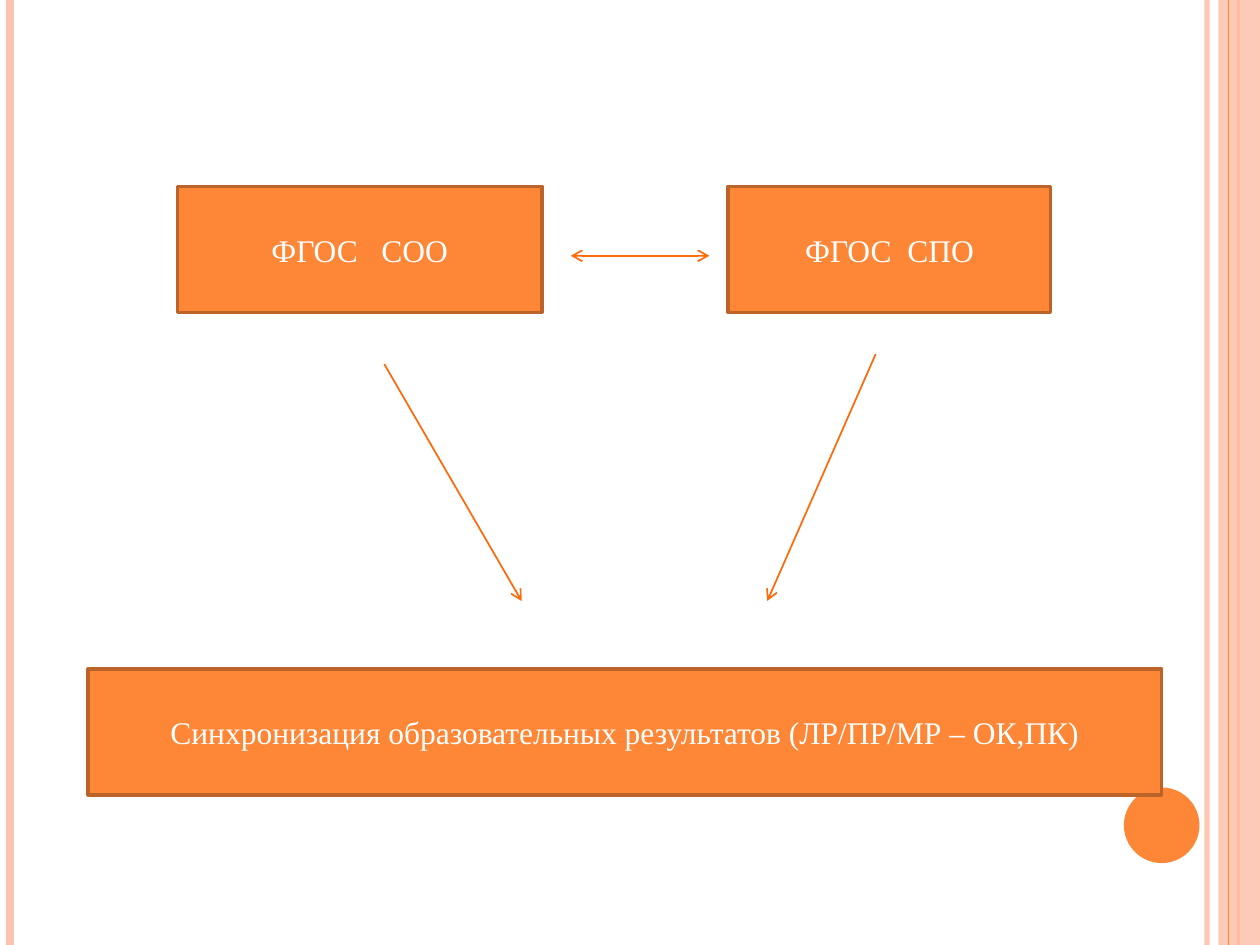
from pptx import Presentation
from pptx.dml.color import RGBColor
from pptx.enum.shapes import MSO_CONNECTOR, MSO_SHAPE
from pptx.enum.text import MSO_ANCHOR, PP_ALIGN
from pptx.oxml.ns import qn
from pptx.util import Inches, Pt
from lxml.etree import SubElement

HUES = {"fill": "FE8637", "edge": "BC6329", "pale": "FEC3AE",
        "arrow": "FF6B0A", "text": "FFFFFF"}
FONT = {"name": "Times New Roman", "size": Pt(18)}
FRAME = {"word_wrap": True, "vertical_anchor": MSO_ANCHOR.MIDDLE}


def hue(name):
    return RGBColor.from_string(HUES[name])


def apply(item, form):
    for key, value in form.items():
        setattr(item, key, value)


def fade(shape, part):
    color = next(shape._element.spPr.iter(qn("a:srgbClr")))
    SubElement(color, qn("a:alpha"), val=str(part * 1000))


def add_line(slide, start, end, name, width, tips=()):
    ends = [Inches(n) for n in (*start, *end)]
    line = slide.shapes.add_connector(MSO_CONNECTOR.STRAIGHT, *ends)
    line.line.color.rgb = hue(name)
    line.line.width = Pt(width)
    for tip in tips:
        SubElement(line.line._get_or_add_ln(), qn(f"a:{tip}"), type="arrow")
    SubElement(line._element.spPr, qn("a:effectLst"))
    return line


def add_shape(slide, kind, area, name):
    shape = slide.shapes.add_shape(kind, *[Inches(n) for n in area])
    shape.shadow.inherit = False
    shape.fill.solid()
    shape.fill.fore_color.rgb = hue(name)
    shape.line.fill.background()
    return shape


def add_box(slide, area, text):
    box = add_shape(slide, MSO_SHAPE.RECTANGLE, area, "fill")
    box.line.color.rgb = hue("edge")
    box.line.width = Pt(2)
    apply(box.text_frame, FRAME)
    para = box.text_frame.paragraphs[0]
    para.alignment = PP_ALIGN.CENTER
    run = para.add_run()
    run.text = text
    apply(run.font, FONT)
    run.font.color.rgb = hue("text")


def add_stripe(slide, left, name, width):
    return add_line(slide, (left, 0), (left, 7.5), name, width)


def add_decor(slide):
    fade(add_stripe(slide, 9.58, "pale", 3), 93)
    add_stripe(slide, 0.08, "pale", 4.5)
    add_stripe(slide, 9.83, "fill", 1.5)
    fade(add_shape(slide, MSO_SHAPE.RECTANGLE, (9.67, 0, 0.33, 7.5), "pale"), 87)
    add_stripe(slide, 9.75, "fill", 0.75)
    add_shape(slide, MSO_SHAPE.OVAL, (8.92, 6.25, 0.6, 0.6), "fill")


def main():
    """Build the slide on aligning the two education standards."""
    deck = Presentation()
    apply(deck, {"slide_width": Inches(10), "slide_height": Inches(7.5)})
    slide = deck.slides.add_slide(deck.slide_layouts[6])
    add_decor(slide)
    for left, top, width, text in (
        (1.41, 1.48, 2.89, "ФГОС   СОО"),
        (5.78, 1.48, 2.56, "ФГОС  СПО"),
        (0.7, 5.31, 8.52,
         "Синхронизация образовательных результатов (ЛР/ПР/МР – ОК,ПК)"),
    ):
        add_box(slide, (left, top, width, 1), text)
    for start, end, tips in (
        ((3.05, 2.89), (4.14, 4.77), ["tailEnd"]),
        ((6.95, 2.81), (6.09, 4.77), ["tailEnd"]),
        ((4.53, 2.03), (5.63, 2.03), ["headEnd", "tailEnd"]),
    ):
        add_line(slide, start, end, "arrow", 1, tips)
    deck.save("out.pptx")


if __name__ == "__main__":
    main()
